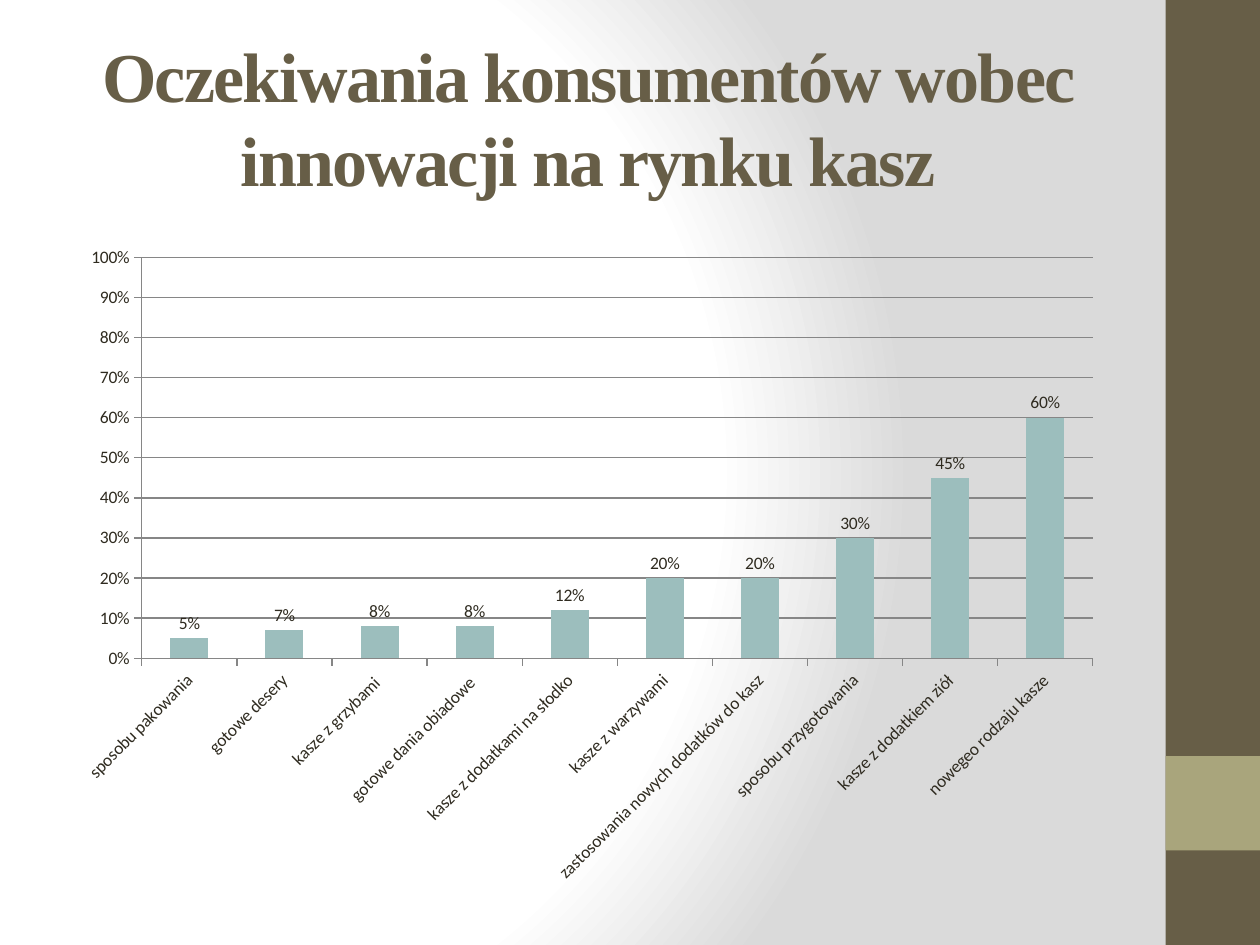
from dataclasses import dataclass

from pptx import Presentation
from pptx.chart.data import CategoryChartData
from pptx.dml.color import RGBColor
from pptx.enum.chart import XL_CHART_TYPE, XL_LABEL_POSITION, XL_TICK_MARK
from pptx.enum.shapes import MSO_SHAPE
from pptx.enum.text import MSO_ANCHOR, PP_ALIGN
from pptx.oxml import parse_xml
from pptx.oxml.ns import nsdecls
from pptx.util import Inches, Pt


@dataclass(frozen=True)
class Theme:
    brown: str = "675E47"
    olive: str = "A9A57C"
    bar: str = "9CBEBD"
    ink: str = "2F2B20"
    grid: str = "868686"
    back_stops: tuple = ((0, "FFFFFF"), (75, "FFFFFF"), (100, "DADADA"))
    title_font: str = "Times New Roman"
    body_font: str = "Calibri"
    title_size: int = 40
    chart_size: int = 10


def rgb(value):
    return RGBColor.from_string(value)


class Deck:
    """Builds styled elements on the current slide."""

    def __init__(self, theme):
        self.theme = theme
        self.prs = Presentation()
        self.prs.slide_width, self.prs.slide_height = Inches(10), Inches(7.5)
        self.s = self.prs.slides.add_slide(self.prs.slide_layouts[5])

    def background(self):
        stops = "".join(
            f'<a:gs pos="{pos * 1000}"><a:srgbClr val="{color}"/></a:gs>'
            for pos, color in self.theme.back_stops
        )
        self.s.background.fill.solid()
        bg_pr = self.s._element.cSld.bg.bgPr
        bg_pr.replace(bg_pr[0], parse_xml(
            f'<a:gradFill {nsdecls("a")} rotWithShape="1"><a:gsLst>{stops}</a:gsLst>'
            '<a:path path="circle"><a:fillToRect l="20000" t="50000" r="100000" b="50000"/>'
            '</a:path></a:gradFill>'
        ))

    def block(self, x, y, w, h, color):
        sp = self.s.shapes.add_shape(
            MSO_SHAPE.RECTANGLE, Inches(x), Inches(y), Inches(w), Inches(h))
        sp.shadow.inherit = False
        sp.fill.solid()
        sp.fill.fore_color.rgb = rgb(color)
        sp.line.fill.background()

    def title(self, text, x, y, w, h):
        sp = self.s.shapes.title
        sp.left, sp.top, sp.width, sp.height = map(Inches, (x, y, w, h))
        tf = sp.text_frame
        tf.word_wrap = True
        tf.vertical_anchor = MSO_ANCHOR.MIDDLE
        p = tf.paragraphs[0]
        p.alignment = PP_ALIGN.CENTER
        r = p.add_run()
        r.text = text
        r.font.name = self.theme.title_font
        r.font.size = Pt(self.theme.title_size)
        r.font.bold = True
        r.font.color.rgb = rgb(self.theme.brown)
        r.font._element.set("spc", "-100")

    def column_chart(self, series_name, values, x, y, w, h):
        data = CategoryChartData(number_format="0%")
        data.categories = list(values)
        data.add_series(series_name, values.values())
        chart = self.s.shapes.add_chart(
            XL_CHART_TYPE.COLUMN_CLUSTERED,
            Inches(x), Inches(y), Inches(w), Inches(h), data).chart
        chart.has_legend = False
        chart.has_title = False
        chart.font.name = self.theme.body_font
        chart.font.size = Pt(self.theme.chart_size)
        chart.font.color.rgb = rgb(self.theme.ink)

        plot = chart.plots[0]
        plot.gap_width = 150
        plot.vary_by_categories = False
        fill = plot.series[0].format.fill
        fill.solid()
        fill.fore_color.rgb = rgb(self.theme.bar)
        plot.has_data_labels = True
        labels = plot.data_labels
        labels.show_value = True
        labels.number_format = "0%"
        labels.number_format_is_linked = False
        labels.position = XL_LABEL_POSITION.OUTSIDE_END

        val, cat = chart.value_axis, chart.category_axis
        val.minimum_scale, val.maximum_scale, val.major_unit = 0, 1, 0.1
        val.has_major_gridlines = True
        val.tick_labels.number_format = "0%"
        val.tick_labels.number_format_is_linked = False
        for axis in (val, cat):
            axis.major_tick_mark = XL_TICK_MARK.OUTSIDE
            axis.minor_tick_mark = XL_TICK_MARK.NONE
        for part in (val, cat, val.major_gridlines):
            part.format.line.color.rgb = rgb(self.theme.grid)
            part.format.line.width = Pt(0.75)
        cat.tick_labels.font.size = Pt(self.theme.chart_size)
        cat._element.txPr.bodyPr.set("rot", "-2700000")


def main():
    theme = Theme()
    deck = Deck(theme)
    deck.background()
    deck.block(9.25, 0, 0.75, 7.5, theme.brown)
    deck.block(9.25, 6, 0.75, 0.75, theme.olive)
    deck.title("Oczekiwania konsumentów wobec innowacji na rynku kasz", 0.5, 0.3, 8.33, 1.25)
    deck.column_chart("Series 1", {
        "sposobu pakowania": 0.05,
        "gotowe desery": 0.07,
        "kasze z grzybami ": 0.08,
        "gotowe dania obiadowe ": 0.08,
        "kasze z dodatkami na słodko": 0.12,
        "kasze z warzywami": 0.2,
        "zastosowania nowych dodatków do kasz": 0.2,
        "sposobu przygotowania": 0.3,
        "kasze z dodatkiem ziół": 0.45,
        "nowegeo rodzaju kasze": 0.6,
    }, 0.51, 1.86, 8.33, 5.25)
    deck.prs.save("out.pptx")


if __name__ == "__main__":
    main()
